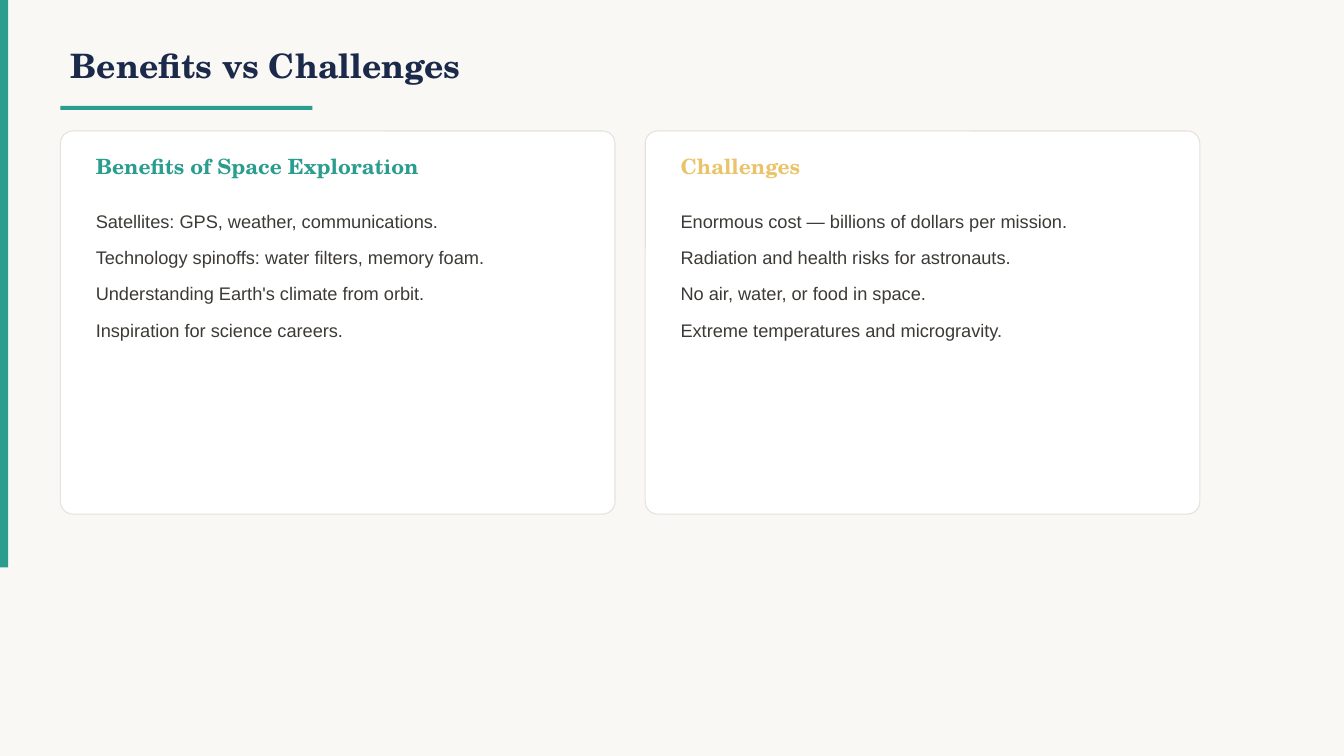
import pptx
import pptx.dml.color
import pptx.enum.shapes
import pptx.enum.text
import pptx.util
from lxml import etree

inch = pptx.util.Inches
kinds = pptx.enum.shapes.MSO_SHAPE
teal, gold, navy, ink = "2A9D8F", "E9C46A", "1B2A4A", "3D3A36"
serif = "TeX Gyre Schola"


def paint(target, color):
    """Give a fill or line a solid colour."""
    target.solid()
    target.fore_color.rgb = pptx.dml.color.RGBColor.from_string(color)


def write(holder, box, lines, size, font, color, bold=False, gap=0, pitch=1.0):
    """Place a placeholder above the cards and fill it, one paragraph a line."""
    holder.left, holder.top, holder.width, holder.height = map(inch, box)
    holder.element.getparent().append(holder.element)
    frame = holder.text_frame
    frame.word_wrap = True
    frame.auto_size = pptx.enum.text.MSO_AUTO_SIZE.NONE
    anchor = pptx.enum.text.MSO_ANCHOR
    frame.vertical_anchor = anchor.MIDDLE if bold else anchor.TOP
    for i, line in enumerate(lines):
        para = frame.paragraphs[0] if i == 0 else frame.add_paragraph()
        para.alignment = pptx.enum.text.PP_ALIGN.LEFT
        para.line_spacing = pitch
        para.space_before = pptx.util.Pt(0)
        para.space_after = pptx.util.Pt(gap)
        props = para._p.get_or_add_pPr()
        props.set("marL", "0")
        props.set("indent", "0")
        etree.SubElement(props, pptx.oxml.ns.qn("a:buNone"))
        run = para.add_run()
        run.text = line
        run.font.size = pptx.util.Pt(size)
        run.font.name = font
        run.font.bold = bold
        paint(run.font.fill, color)


# Slide on the Comparison layout
deck = pptx.Presentation()
deck.slide_width, deck.slide_height = inch(13.33), inch(7.5)
slide = deck.slides.add_slide(deck.slide_layouts[4])
paint(slide.background.fill, "FAF8F5")
slots = {p.placeholder_format.idx: p for p in slide.placeholders}

# Side bar and title rule
left, top = 0.6, 1.3
for box in [(0, 0, 0.08, 5.63), (left, 1.05, 2.5, 0.04)]:
    bar = slide.shapes.add_shape(kinds.RECTANGLE, *map(inch, box))
    bar.shadow.inherit = False
    paint(bar.fill, teal)
    bar.line.fill.background()

# Title
write(slots[0], (left, 0.3, 10, 0.7), ["Benefits vs Challenges"],
      24, serif, navy, bold=True)

# Two cards, each with a heading and a list
wide, high, step, pad = 5.5, 3.8, 5.8, 0.25
cards = [
    ("Benefits of Space Exploration", teal, [
        "Satellites: GPS, weather, communications.",
        "Technology spinoffs: water filters, memory foam.",
        "Understanding Earth's climate from orbit.",
        "Inspiration for science careers."]),
    ("Challenges", gold, [
        "Enormous cost — billions of dollars per mission.",
        "Radiation and health risks for astronauts.",
        "No air, water, or food in space.",
        "Extreme temperatures and microgravity."]),
]
for col, (head, color, points) in enumerate(cards):
    x = left + col * step
    card = slide.shapes.add_shape(kinds.ROUNDED_RECTANGLE,
                                  *map(inch, (x, top, wide, high)))
    card.adjustments[0] = 0.032
    card.shadow.inherit = False
    paint(card.fill, "FFFFFF")
    paint(card.line.fill, "E5E2DC")
    card.line.width = pptx.util.Pt(0.75)
    inner = wide - 2 * pad
    write(slots[1 + 2 * col], (x + pad, top + 0.15, inner, 0.4), [head],
          15, serif, color, bold=True)
    write(slots[2 + 2 * col], (x + pad, top + 0.65, inner, 2.9), points,
          13, "Arial", ink, gap=4, pitch=1.4)

deck.save("out.pptx")
